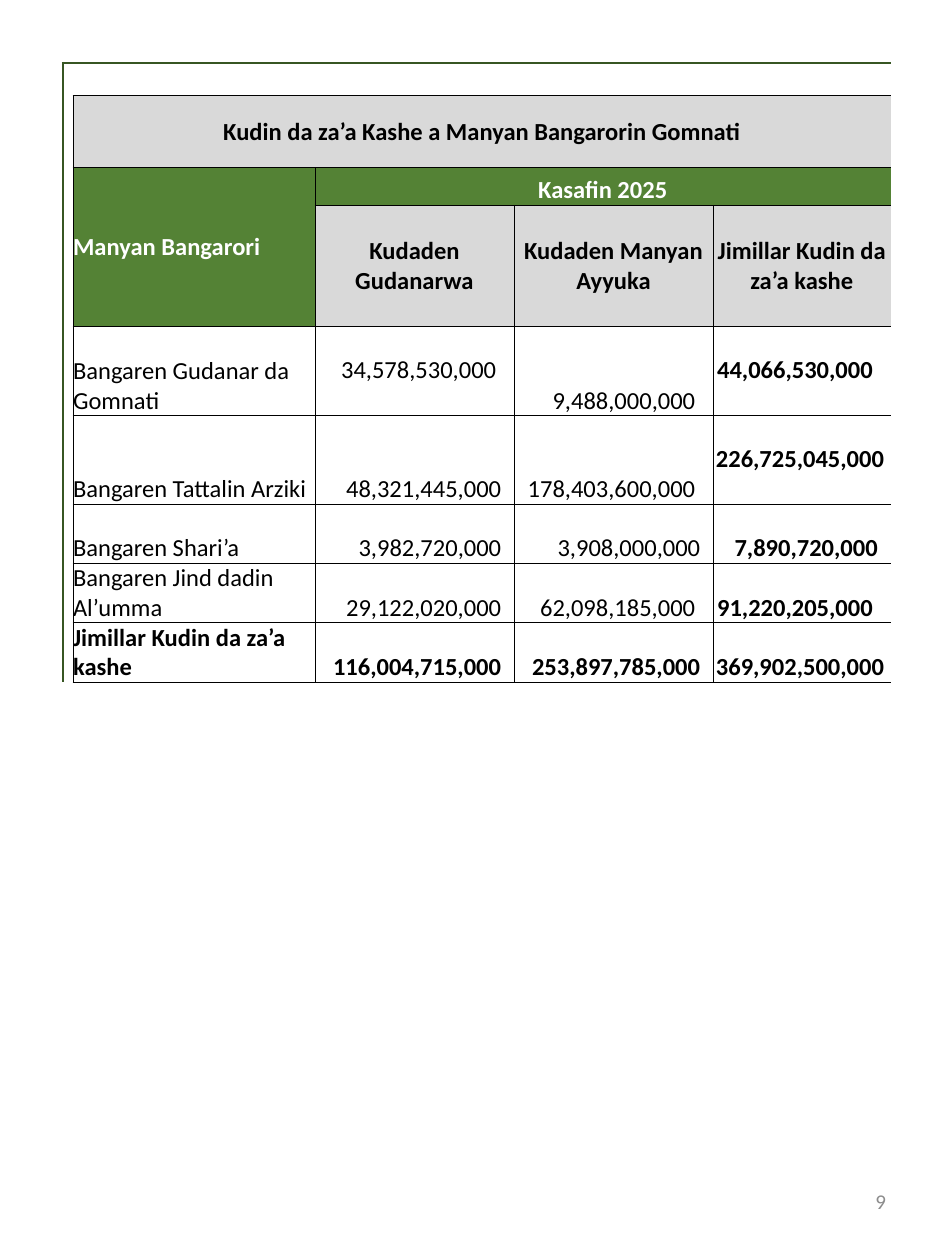
"""Builds the one-page budget table of main government sectors."""
from lxml import etree
from pptx import Presentation
from pptx.dml.color import RGBColor
from pptx.enum.text import MSO_ANCHOR, PP_ALIGN
from pptx.oxml.ns import qn
from pptx.util import Inches, Pt

COLORS = {"black": "000000", "white": "FFFFFF", "green": "548235",
          "frame": "375623", "grey": "D9D9D9", "number": "8C8C8C"}
COLUMN_WIDTHS = [0.08, 1.92, 1.3, 0.28, 0.81, 0.77, 0.32, 1.09]
ROW_HEIGHTS = [0.26, 0.57, 0.3, 0.96, 0.71, 0.7, 0.47, 0.47, 0.47]
AMOUNT_COLUMNS = [2, 4, 6]
HEADINGS = ["Kudaden Gudanarwa", "Kudaden Manyan Ayyuka", "Jimillar Kudin da za’a kashe"]
THIN = ("black", 0.5)
THICK = ("frame", 1.5)
BOX = {"L": THIN, "R": THIN, "T": THIN, "B": THIN}
NARROW, MIDDLE, WIDE = 0.05, 0.1, 0.14
LINE = 0.24
SECTORS = [
    ("Bangaren Gudanar da Gomnati",
     [("34,578,530,000", WIDE, LINE), ("9,488,000,000", WIDE, 0), ("44,066,530,000", WIDE, LINE)]),
    ("Bangaren Tattalin Arziki",
     [("48,321,445,000", MIDDLE, 0), ("178,403,600,000", WIDE, 0), ("226,725,045,000", NARROW, LINE)]),
    ("Bangaren Shari’a",
     [("3,982,720,000", MIDDLE, 0), ("3,908,000,000", MIDDLE, 0), ("7,890,720,000", MIDDLE, 0)]),
    ("Bangaren Jind dadin Al’umma",
     [("29,122,020,000", MIDDLE, 0), ("62,098,185,000", WIDE, 0), ("91,220,205,000", WIDE, 0)]),
    ("Jimillar Kudin da za’a kashe",
     [("116,004,715,000", MIDDLE, 0), ("253,897,785,000", MIDDLE, 0), ("369,902,500,000", NARROW, 0)]),
]


class BudgetPage:
    """Holds the style and the current slide."""

    font = "Calibri"
    size = 14
    plain_table = "{2D5ABB26-0587-4C30-8999-92F81FD0307C}"

    def __init__(self, deck):
        self.page = deck.slides.add_slide(deck.slide_layouts[6])
        self.grid = None

    def color(self, name):
        return RGBColor.from_string(COLORS[name])

    def set_text(self, para, text, size, color, bold=False, align=PP_ALIGN.LEFT):
        para.text = text
        para.alignment = align
        para.font.name = self.font
        para.font.size = Pt(size)
        para.font.bold = bold
        para.font.color.rgb = self.color(color)

    def table(self, left, top, widths, heights):
        frame = self.page.shapes.add_table(
            len(heights), len(widths), Inches(left), Inches(top),
            Inches(sum(widths)), Inches(sum(heights)))
        self.grid = frame.table
        self.grid.first_row = self.grid.horz_banding = False
        frame._element.find(".//" + qn("a:tableStyleId")).text = self.plain_table
        for column, width in zip(self.grid.columns, widths):
            column.width = Inches(width)
        for row, height in zip(self.grid.rows, heights):
            row.height = Inches(height)

    def border(self, cell, side, color, width):
        properties = cell._tc.get_or_add_tcPr()
        line = etree.SubElement(properties, qn("a:ln" + side), w=str(Pt(width)))
        fill = etree.SubElement(line, qn("a:solidFill"))
        etree.SubElement(fill, qn("a:srgbClr"), val=COLORS[color])

    def cell(self, row, column, text="", span=(1, 1), edges=BOX, fill=None, color="black",
             bold=True, align=PP_ALIGN.LEFT, anchor=MSO_ANCHOR.BOTTOM, right=0, bottom=0):
        last_row, last_column = row + span[0] - 1, column + span[1] - 1
        if span != (1, 1):
            self.grid.cell(row, column).merge(self.grid.cell(last_row, last_column))
        for r in range(row, last_row + 1):
            for c in range(column, last_column + 1):
                part = self.grid.cell(r, c)
                outer = {"L": c == column, "R": c == last_column, "T": r == row, "B": r == last_row}
                for side in "LRTB":
                    if outer[side] and side in edges:
                        self.border(part, side, *edges[side])
                part.margin_left = part.margin_top = 0
                part.margin_right, part.margin_bottom = Inches(right), Inches(bottom)
                part.vertical_anchor = anchor
                if fill:
                    part.fill.solid()
                    part.fill.fore_color.rgb = self.color(fill)
                else:
                    part.fill.background()
                para = part.text_frame.paragraphs[0]
                self.set_text(para, text if (r, c) == (row, column) else "",
                              self.size, color, bold, align)
                if not para.runs:
                    etree.SubElement(para._p, qn("a:endParaRPr"), sz=str(self.size * 100))

    def page_number(self, text, left, top, width, height):
        box = self.page.shapes.add_textbox(Inches(left), Inches(top), Inches(width), Inches(height))
        box.text_frame.word_wrap = True
        box.text_frame.vertical_anchor = MSO_ANCHOR.MIDDLE
        self.set_text(box.text_frame.paragraphs[0], text, 12, "number", align=PP_ALIGN.RIGHT)


def main():
    deck = Presentation()
    deck.slide_width, deck.slide_height = Inches(7.5), Inches(10)
    sheet = BudgetPage(deck)
    sheet.table(0.5, 0.5, COLUMN_WIDTHS, ROW_HEIGHTS)

    sheet.cell(0, 0, edges={"L": THICK, "T": THICK})
    for column, count in [(1, 2), (3, 2), (5, 2), (7, 1)]:
        sheet.cell(0, column, span=(1, count), edges={"T": THICK, "B": THIN})
    for row in range(1, len(ROW_HEIGHTS)):
        sheet.cell(row, 0, edges={"L": THICK, "R": THIN})

    heading = {"align": PP_ALIGN.CENTER, "anchor": MSO_ANCHOR.MIDDLE, "fill": "grey"}
    sheet.cell(1, 1, "Kudin da za’a Kashe a Manyan Bangarorin Gomnati", (1, 7), **heading)
    sheet.cell(2, 1, "Manyan Bangarori", (2, 1), fill="green", color="white",
               anchor=MSO_ANCHOR.MIDDLE)
    sheet.cell(2, 2, "Kasafin 2025", (1, 6), fill="green", color="white", align=PP_ALIGN.CENTER)
    for column, text in zip(AMOUNT_COLUMNS, HEADINGS):
        sheet.cell(3, column, text, (1, 2), **heading)

    for row, (sector, amounts) in enumerate(SECTORS, start=4):
        total = row == len(ROW_HEIGHTS) - 1
        sheet.cell(row, 1, sector, bold=total)
        for column, (amount, right, bottom) in zip(AMOUNT_COLUMNS, amounts):
            sheet.cell(row, column, amount, (1, 2), bold=total or column == AMOUNT_COLUMNS[-1],
                       align=PP_ALIGN.RIGHT, right=right, bottom=bottom)

    sheet.page_number("9", 5.38, 9.27, 1.75, 0.53)
    deck.save("out.pptx")


if __name__ == "__main__":
    main()
